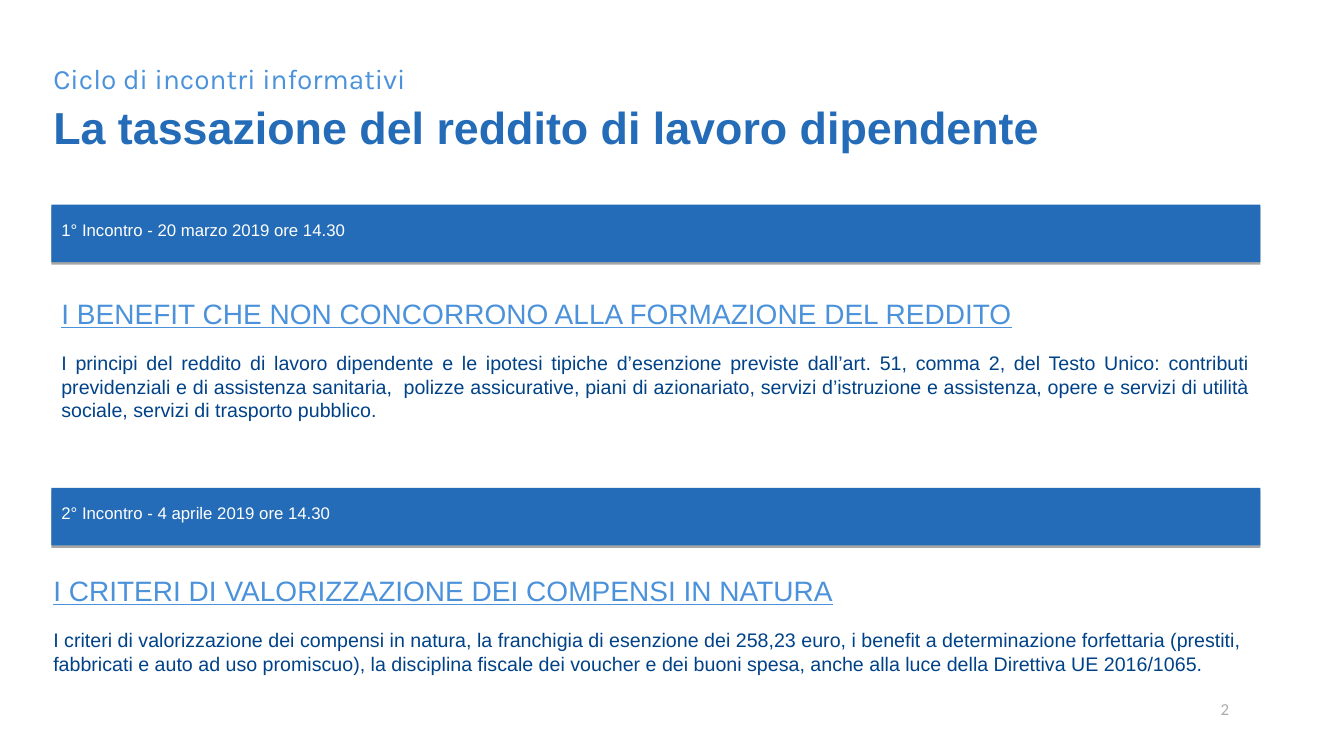
from dataclasses import dataclass

from lxml import etree
from pptx import Presentation
from pptx.dml.color import RGBColor
from pptx.enum.shapes import MSO_SHAPE
from pptx.enum.text import MSO_ANCHOR, PP_ALIGN
from pptx.oxml.ns import qn
from pptx.util import Pt

RECT = MSO_SHAPE.RECTANGLE
TOP, MIDDLE = MSO_ANCHOR.TOP, MSO_ANCHOR.MIDDLE
LEFT, RIGHT, JUSTIFY = PP_ALIGN.LEFT, PP_ALIGN.RIGHT, PP_ALIGN.JUSTIFY
SCALE = 9144


@dataclass(frozen=True)
class Theme:
    blue: str = "246CB7"
    light: str = "4B92DB"
    navy: str = "004288"
    white: str = "FFFFFF"
    grey: str = "AFABAB"
    black: str = "000000"
    sans: str = "Arial"
    intro: str = "Karla"
    foot: str = "Calibri"
    title: int = 32
    head: int = 20
    body: int = 14
    small: int = 12


class Deck:
    def __init__(self, theme, wide, high):
        self.theme = theme
        self.prs = Presentation()
        self.prs.slide_width = wide * SCALE
        self.prs.slide_height = high * SCALE
        self.slide = self.prs.slides.add_slide(self.prs.slide_layouts[6])

    def box(self, *area, anchor=TOP, inset=5):
        shape = self.slide.shapes.add_textbox(*(n * SCALE for n in area))
        return self.frame(shape, anchor, inset)

    def frame(self, shape, anchor, inset):
        frame = shape.text_frame
        frame.word_wrap = True
        frame.vertical_anchor = anchor
        frame.margin_top = inset * SCALE
        return frame

    def line(self, frame, text, size, color, face=None, align=LEFT, gap=0,
             bold=False, under=False):
        para = frame.paragraphs[0]
        if para.runs:
            para = frame.add_paragraph()
        para.add_run().text = text
        para.alignment = align
        para.space_before = Pt(gap)
        font = para.font
        font.name = face or self.theme.sans
        font.size = Pt(size)
        font.bold = bold
        font.underline = under
        font.color.rgb = RGBColor.from_string(color)

    def shade(self, shape):
        effects = etree.SubElement(shape.element.spPr, qn("a:effectLst"))
        shadow = etree.SubElement(effects, qn("a:outerShdw"), blurRad="0",
                                  dist=str(Pt(1.8)), dir="5400000",
                                  rotWithShape="0")
        color = etree.SubElement(shadow, qn("a:srgbClr"), val=self.theme.black)
        etree.SubElement(color, qn("a:alpha"), val="35000")

    def bar(self, text, *area):
        look = self.theme
        shape = self.slide.shapes.add_shape(RECT, *(n * SCALE for n in area))
        shape.fill.solid()
        shape.fill.fore_color.rgb = RGBColor.from_string(look.blue)
        shape.line.fill.background()
        self.shade(shape)
        frame = self.frame(shape, TOP, 15)
        self.line(frame, text, look.small, look.white)

    def topic(self, head, body, *area):
        look = self.theme
        frame = self.box(*area, anchor=MIDDLE, inset=25)
        self.line(frame, head, look.head, look.light, align=JUSTIFY, under=True)
        self.line(frame, body, look.body, look.navy, align=JUSTIFY, gap=15)


MEETINGS = [
    (203, "1° Incontro - 20 marzo 2019 ore 14.30",
     (51, 265, 1199, 162),
     "I BENEFIT CHE NON CONCORRONO ALLA FORMAZIONE DEL REDDITO",
     "I principi del reddito di lavoro dipendente e le ipotesi tipiche "
     "d’esenzione previste dall’art. 51, comma 2, del Testo Unico: contributi "
     "previdenziali e di assistenza sanitaria,  polizze assicurative, piani di "
     "azionariato, servizi d’istruzione e assistenza, opere e servizi di "
     "utilità sociale, servizi di trasporto pubblico."),
    (484, "2° Incontro - 4 aprile 2019 ore 14.30",
     (43, 543, 1199, 133),
     "I CRITERI DI VALORIZZAZIONE DEI COMPENSI IN NATURA",
     "I criteri di valorizzazione dei compensi in natura, la franchigia di "
     "esenzione dei 258,23 euro, i benefit a determinazione forfettaria "
     "(prestiti, fabbricati e auto ad uso promiscuo), la disciplina fiscale "
     "dei voucher e dei buoni spesa, anche alla luce della Direttiva UE "
     "2016/1065."),
]


def main():
    look = Theme()
    deck = Deck(look, 1333, 750)
    title = deck.box(43, 56, 1168, 128)
    deck.line(title, "Ciclo di incontri informativi", look.head, look.light,
              look.intro)
    deck.line(title, "La tassazione del reddito di lavoro dipendente",
              look.title, look.blue, gap=3, bold=True)
    for top, date, area, head, body in MEETINGS:
        deck.bar(date, 51, top, 1199, 57)
        deck.topic(head, body, *area)
    page = deck.box(942, 688, 287, 47)
    deck.line(page, "2", look.small, look.grey, look.foot, RIGHT)
    deck.prs.save("out.pptx")


if __name__ == "__main__":
    main()
